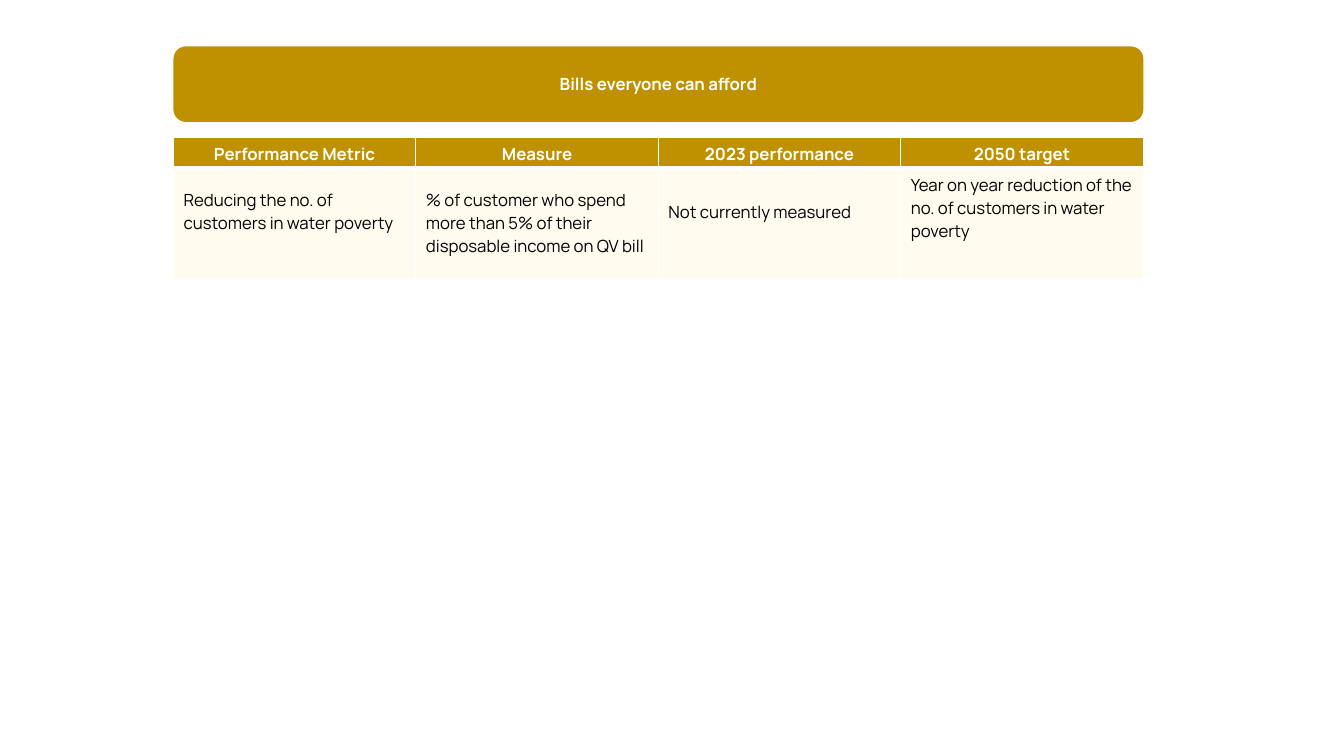
"""Build a slide with a heading bar and a table of bill affordability metrics."""
from dataclasses import dataclass

from lxml.etree import SubElement
from pptx import Presentation
from pptx.dml.color import RGBColor
from pptx.enum.shapes import MSO_SHAPE as Preset
from pptx.enum.text import MSO_ANCHOR as Anchor, PP_ALIGN as Align
from pptx.oxml.ns import qn
from pptx.slide import Slide
from pptx.table import _Cell as Cell
from pptx.text.text import TextFrame
from pptx.util import Inches, Pt


@dataclass(frozen=True)
class Theme:
    font: str = "Manrope"
    size: int = 12
    gold: str = "BF9000"
    cream: str = "FFFBEF"
    white: str = "FFFFFF"
    black: str = "000000"
    thin: int = 1
    thick: int = 3


@dataclass(frozen=True)
class Grid:
    left: float = 1.72
    width: float = 9.62
    bar_top: float = 0.46
    bar_height: float = 0.75
    gap: float = 0.15
    header_height: float = 0.31
    body_height: float = 1.08

    @property
    def table_top(self) -> float:
        return self.bar_top + self.bar_height + self.gap


@dataclass(frozen=True)
class Metric:
    heading: str
    value: str
    bottom_margin: float


THEME = Theme()
GRID = Grid()
METRICS = (
    Metric("Performance Metric", "Reducing the no. of customers in water poverty", 0.28),
    Metric("Measure", "% of customer who spend more than 5% of their disposable income on QV bill", 0.05),
    Metric("2023 performance", "Not currently measured", 0.28),
    Metric("2050 target", "Year on year reduction of the no. of customers in water poverty", 0.36),
)


def write_text(frame: TextFrame, text: str, *, color: str, bold: bool = False,
               align: Align = Align.LEFT) -> None:
    paragraph = frame.paragraphs[0]
    paragraph.alignment = align
    run = paragraph.add_run()
    run.text = text
    run.font.name = THEME.font
    run.font.size = Pt(THEME.size)
    run.font.bold = bold
    run.font.color.rgb = RGBColor.from_string(color)


def draw_borders(cell: Cell, *, top: int, bottom: int) -> None:
    properties = cell._tc.get_or_add_tcPr()
    widths = {"lnL": THEME.thin, "lnR": THEME.thin, "lnT": top, "lnB": bottom}
    for side, width in widths.items():
        line = SubElement(properties, qn(f"a:{side}"), w=str(Pt(width)))
        fill = SubElement(line, qn("a:solidFill"))
        SubElement(fill, qn("a:srgbClr"), val=THEME.white)


def fill_cell(cell: Cell, *, fill: str, anchor: Anchor, bottom_margin: float,
              top_border: int, bottom_border: int) -> None:
    draw_borders(cell, top=top_border, bottom=bottom_border)
    cell.fill.solid()
    cell.fill.fore_color.rgb = RGBColor.from_string(fill)
    cell.vertical_anchor = anchor
    cell.margin_bottom = Inches(bottom_margin)


def add_heading_bar(slide: Slide, text: str) -> None:
    bar = slide.shapes.add_shape(
        Preset.ROUNDED_RECTANGLE, Inches(GRID.left), Inches(GRID.bar_top),
        Inches(GRID.width), Inches(GRID.bar_height))
    bar.shadow.inherit = False
    bar.fill.solid()
    bar.fill.fore_color.rgb = RGBColor.from_string(THEME.gold)
    bar.line.fill.background()
    bar.text_frame.vertical_anchor = Anchor.MIDDLE
    write_text(bar.text_frame, text, color=THEME.white, bold=True, align=Align.CENTER)


def add_metrics_table(slide: Slide, metrics: tuple[Metric, ...]) -> None:
    heights = (GRID.header_height, GRID.body_height)
    table = slide.shapes.add_table(
        len(heights), len(metrics), Inches(GRID.left), Inches(GRID.table_top),
        Inches(GRID.width), Inches(sum(heights))).table
    table.horz_banding = False
    for row, height in zip(table.rows, heights):
        row.height = Inches(height)
    for column, metric in enumerate(metrics):
        header, body = table.cell(0, column), table.cell(1, column)
        fill_cell(header, fill=THEME.gold, anchor=Anchor.TOP, bottom_margin=0,
                  top_border=THEME.thin, bottom_border=THEME.thick)
        write_text(header.text_frame, metric.heading, color=THEME.white, bold=True, align=Align.CENTER)
        fill_cell(body, fill=THEME.cream, anchor=Anchor.MIDDLE, bottom_margin=metric.bottom_margin,
                  top_border=THEME.thick, bottom_border=THEME.thin)
        write_text(body.text_frame, metric.value, color=THEME.black)


def main() -> None:
    presentation = Presentation()
    presentation.slide_width = Inches(13.33)
    presentation.slide_height = Inches(7.5)
    slide = presentation.slides.add_slide(presentation.slide_layouts.get_by_name("Blank"))
    add_metrics_table(slide, METRICS)
    add_heading_bar(slide, "Bills everyone can afford")
    presentation.save("out.pptx")


if __name__ == "__main__":
    main()
